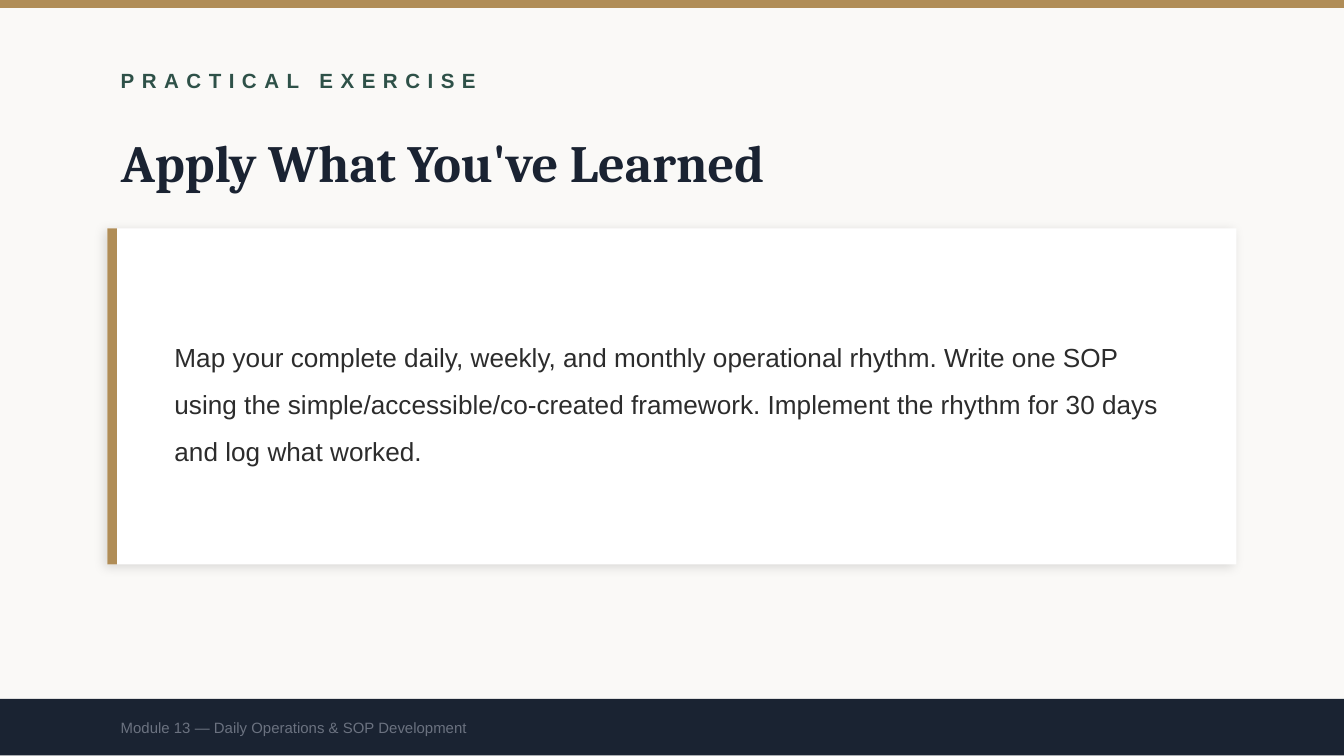
from lxml.etree import SubElement
from pptx import Presentation
from pptx.dml.color import RGBColor
from pptx.enum.shapes import MSO_SHAPE as Shape
from pptx.enum.text import MSO_ANCHOR as Anchor, MSO_AUTO_SIZE as AutoSize, PP_ALIGN as Align
from pptx.oxml.ns import qn
from pptx.util import Pt

WIDTH, HEIGHT = 720, 405
LEFT = 57.6
TEXT_WIDTH = 576
CARD_TOP, CARD_HEIGHT = 122.4, 180
FOOTER_TOP, FOOTER_HEIGHT = 374.4, 30.24
GOLD, NAVY = "B08D57", "1A2332"


def color(hex_value):
    return RGBColor.from_string(hex_value)


def add_block(slide, left, top, width, height, fill):
    block = slide.shapes.add_shape(
        Shape.RECTANGLE, Pt(left), Pt(top), Pt(width), Pt(height))
    block.shadow.inherit = False
    block.fill.solid()
    block.fill.fore_color.rgb = color(fill)
    block.line.fill.background()
    return block


def add_soft_shadow(block):
    effects = block._element.spPr.find(qn("a:effectLst"))
    shadow = SubElement(effects, qn("a:outerShdw"), blurRad=str(Pt(6)),
                        dist=str(Pt(2)), dir=str(135 * 60000),
                        algn="bl", rotWithShape="0")
    black = SubElement(shadow, qn("a:srgbClr"), val="000000")
    SubElement(black, qn("a:alpha"), val="12000")


def write_text(slide, text, left, top, width, height, *, size, fill,
               face="Arial", bold=False, tracking=None, line_spacing=None,
               holder=None):
    """Write one paragraph in a new text box, or in the given placeholder."""
    box = holder or slide.shapes.add_textbox(0, 0, 0, 0)
    box.left, box.top = Pt(left), Pt(top)
    box.width, box.height = Pt(width), Pt(height)
    frame = box.text_frame
    frame.word_wrap = True
    frame.auto_size = AutoSize.NONE
    frame.vertical_anchor = Anchor.MIDDLE
    paragraph = frame.paragraphs[0]
    paragraph.alignment = Align.LEFT
    if line_spacing:
        paragraph.line_spacing = line_spacing
    run = paragraph.add_run()
    run.text = text
    run.font.name, run.font.size, run.font.bold = face, Pt(size), bold
    run.font.color.rgb = color(fill)
    if tracking:
        run._r.get_or_add_rPr().set("spc", str(tracking * 100))


def main():
    deck = Presentation()
    deck.slide_width, deck.slide_height = Pt(WIDTH), Pt(HEIGHT)
    slide = deck.slides.add_slide(deck.slide_layouts[5])  # Title Only
    slide.background.fill.solid()
    slide.background.fill.fore_color.rgb = color("FAF9F7")

    # Top band and heading
    add_block(slide, 0, 0, WIDTH, 4.32, GOLD)
    write_text(slide, "PRACTICAL EXERCISE", LEFT, 28.8, TEXT_WIDTH, 28.8,
               size=11, fill="2E5148", bold=True, tracking=4)
    write_text(slide, "Apply What You've Learned", LEFT, 64.8, TEXT_WIDTH, 43.2,
               size=28, fill=NAVY, face="Cambria", bold=True,
               holder=slide.shapes.title)

    # Exercise card with its accent edge
    card = add_block(slide, LEFT, CARD_TOP, WIDTH - 2 * LEFT, CARD_HEIGHT, "FFFFFF")
    add_soft_shadow(card)
    add_block(slide, LEFT, CARD_TOP, 5.04, CARD_HEIGHT, GOLD)
    write_text(slide,
               "Map your complete daily, weekly, and monthly operational rhythm. "
               "Write one SOP using the simple/accessible/co-created framework. "
               "Implement the rhythm for 30 days and log what worked.",
               86.4, CARD_TOP + 14.4, 554.4, CARD_HEIGHT - 28.8,
               size=14, fill="2C2C2C", line_spacing=1.5)

    # Footer
    add_block(slide, 0, FOOTER_TOP, WIDTH, FOOTER_HEIGHT, NAVY)
    write_text(slide, "Module 13 — Daily Operations & SOP Development",
               LEFT, FOOTER_TOP, TEXT_WIDTH, FOOTER_HEIGHT,
               size=8, fill="6B7280")

    deck.save("out.pptx")


if __name__ == "__main__":
    main()
